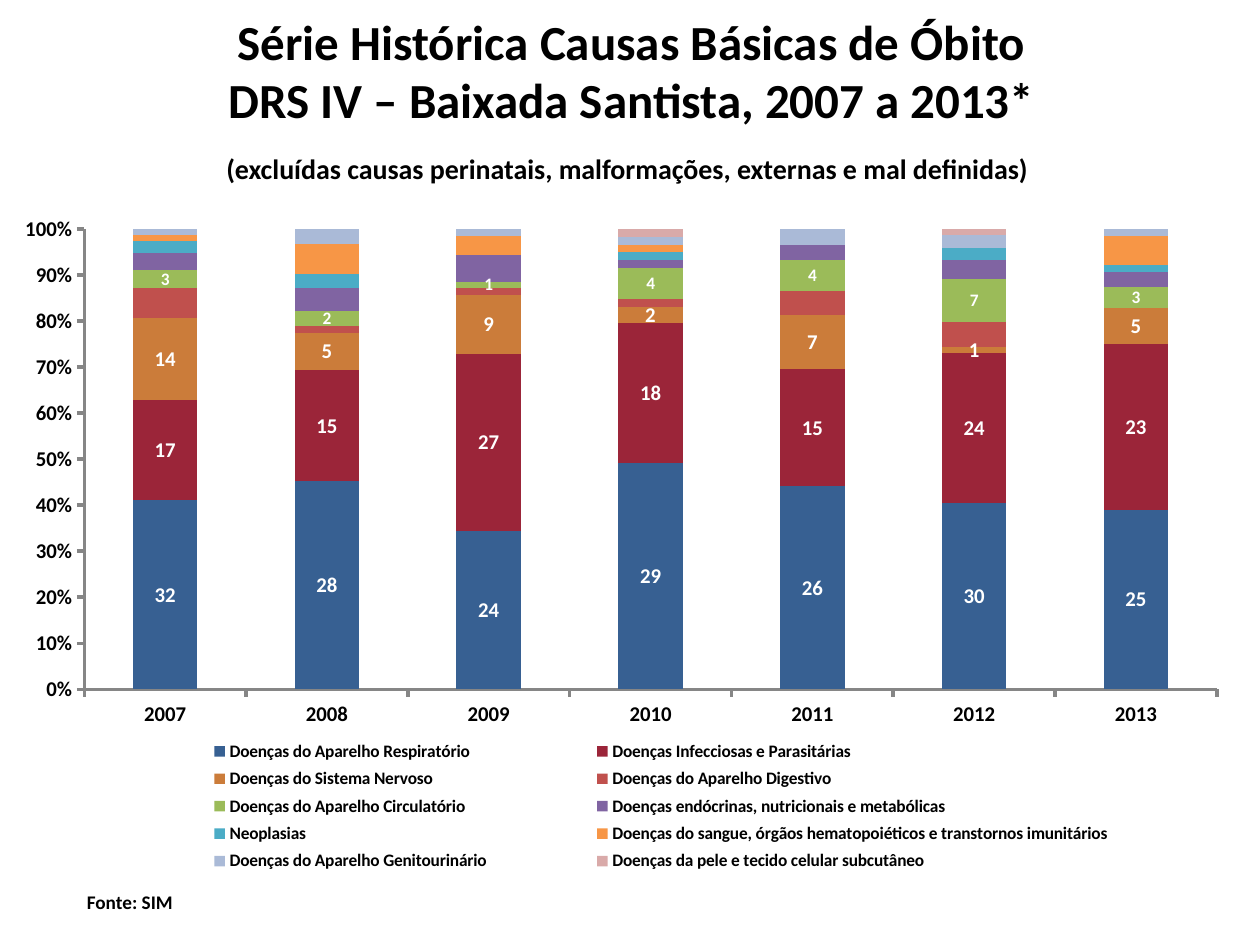
from lxml import etree
from pptx import Presentation
from pptx.chart.data import CategoryChartData
from pptx.dml.color import RGBColor
from pptx.enum.chart import XL_CHART_TYPE, XL_LABEL_POSITION, XL_LEGEND_POSITION, XL_TICK_MARK
from pptx.enum.text import MSO_ANCHOR, PP_ALIGN
from pptx.oxml.ns import qn
from pptx.util import Inches, Pt

STACKED = XL_CHART_TYPE.COLUMN_STACKED_100
MIDDLE = XL_LABEL_POSITION.CENTER
BOTTOM = XL_LEGEND_POSITION.BOTTOM
OUTSIDE = XL_TICK_MARK.OUTSIDE
LEFT, CENTER = PP_ALIGN.LEFT, PP_ALIGN.CENTER
FONT = "Calibri"

COLORS = {
    "text": "000000", "label": "FFFFFF", "axis": "868686",
    "blue": "376092", "wine": "9B2539", "ochre": "CB7C3A", "red": "C0504D",
    "green": "9BBB59", "purple": "8064A2", "teal": "4BACC6",
    "orange": "F79646", "pale": "AABAD7", "pink": "D9AAA9",
}

TITLE = "Série Histórica Causas Básicas de Óbito\vDRS IV – Baixada Santista, 2007 a 2013*"
NOTES = [  # text, box, size, alignment
    ("Fonte: SIM", (0.59, 7.02, 0.89, 0.29), 11, LEFT),
    ("(excluídas causas perinatais, malformações, externas e mal definidas)",
     (1.68, 1.15, 6.6, 0.47), 16, CENTER),
]
YEARS = [str(year) for year in range(2007, 2014)]
CAUSES = [  # name, deaths by year, colour, label size
    ("Doenças do Aparelho Respiratório", (32, 28, 24, 29, 26, 30, 25), "blue", 12),
    ("Doenças Infecciosas e Parasitárias", (17, 15, 27, 18, 15, 24, 23), "wine", 12),
    ("Doenças do Sistema Nervoso", (14, 5, 9, 2, 7, 1, 5), "ochre", 12),
    ("Doenças do Aparelho Digestivo", (5, 1, 1, 1, 3, 4, None), "red", None),
    ("Doenças do Aparelho Circulatório", (3, 2, 1, 4, 4, 7, 3), "green", 10),
    ("Doenças endócrinas, nutricionais e metabólicas", (3, 3, 4, 1, 2, 3, 2), "purple", None),
    ("Neoplasias", (2, 2, None, 1, None, 2, 1), "teal", None),
    ("Doenças do sangue, órgãos hematopoiéticos e transtornos imunitários",
     (1, 4, 3, 1, None, None, 4), "orange", None),
    ("Doenças do Aparelho Genitourinário", (1, 2, 1, 1, 2, 2, 1), "pale", None),
    ("Doenças da pele e tecido celular subcutâneo",
     (None, None, None, 1, None, 1, None), "pink", None),
]


def rgb(name):
    return RGBColor.from_string(COLORS[name])


def style(font, size, color="text"):
    font.name, font.size, font.bold = FONT, Pt(size), True
    font.color.rgb = rgb(color)


def place(shape, box):
    shape.left, shape.top, shape.width, shape.height = map(Inches, box)


def write(frame, text, size, align):
    frame.text = text
    for para in frame.paragraphs:
        para.alignment = align
        style(para.font, size)


def arrange(parent, index, box, inner=False):
    """Fix a chart part at left, top, width, height, in percent of the chart."""
    for old in parent.findall(qn("c:layout")):
        parent.remove(old)
    layout = etree.Element(qn("c:layout"))
    manual = etree.SubElement(layout, qn("c:manualLayout"))
    parts = [("layoutTarget", "inner")] if inner else []
    parts += [("xMode", "edge"), ("yMode", "edge")]
    parts += [(tag, share / 100) for tag, share in zip("xywh", box)]
    for tag, value in parts:
        etree.SubElement(manual, qn("c:" + tag)).set("val", str(value))
    parent.insert(index, layout)


def add_chart(slide):
    data = CategoryChartData()
    data.categories = YEARS
    for name, deaths, _, _ in CAUSES:
        data.add_series(name, deaths)
    box = map(Inches, (0.2, 1.62, 9.61, 5.51))
    chart = slide.shapes.add_chart(STACKED, *box, data).chart
    chart.has_title = False
    chart.font.name, chart.font.size = FONT, Pt(10)
    chart.font.color.rgb = rgb("text")

    plot = chart.plots[0]
    plot.gap_width, plot.overlap, plot.vary_by_categories = 150, 100, False
    for series, (_, _, color, size) in zip(plot.series, CAUSES):
        series.format.fill.solid()
        series.format.fill.fore_color.rgb = rgb(color)
        if size:
            labels = series.data_labels
            labels.show_value, labels.position = True, MIDDLE
            style(labels.font, size, "label")

    for axis in (chart.category_axis, chart.value_axis):
        axis.has_major_gridlines = False
        axis.major_tick_mark = OUTSIDE
        style(axis.tick_labels.font, 12)
        axis.format.line.color.rgb = rgb("axis")
        axis.format.line.width = Pt(2)
    value = chart.value_axis
    value.minimum_scale, value.maximum_scale, value.major_unit = 0, 1, 0.1
    value.tick_labels.number_format = "0%"
    value.tick_labels.number_format_is_linked = False

    chart.has_legend = True
    legend = chart.legend
    legend.position, legend.include_in_layout = BOTTOM, False
    style(legend.font, 10)
    area = chart._chartSpace.find(".//" + qn("c:plotArea"))
    arrange(area, 0, (3.9, 3.6, 94.5, 66.3), inner=True)
    arrange(legend._element, 1, (6, 76.3, 92, 20.9))


def main():
    deck = Presentation()
    deck.slide_width, deck.slide_height = Inches(10), Inches(7.5)
    slide = deck.slides.add_slide(deck.slide_layouts[5])
    title = slide.shapes.title
    place(title, (0.51, 0.21, 9, 0.69))
    write(title.text_frame, TITLE, 28, CENTER)
    title.text_frame.vertical_anchor = MSO_ANCHOR.MIDDLE
    add_chart(slide)
    for text, box, size, align in NOTES:
        note = slide.shapes.add_textbox(*map(Inches, box))
        note.text_frame.word_wrap = False
        write(note.text_frame, text, size, align)
    deck.save("out.pptx")


if __name__ == "__main__":
    main()
